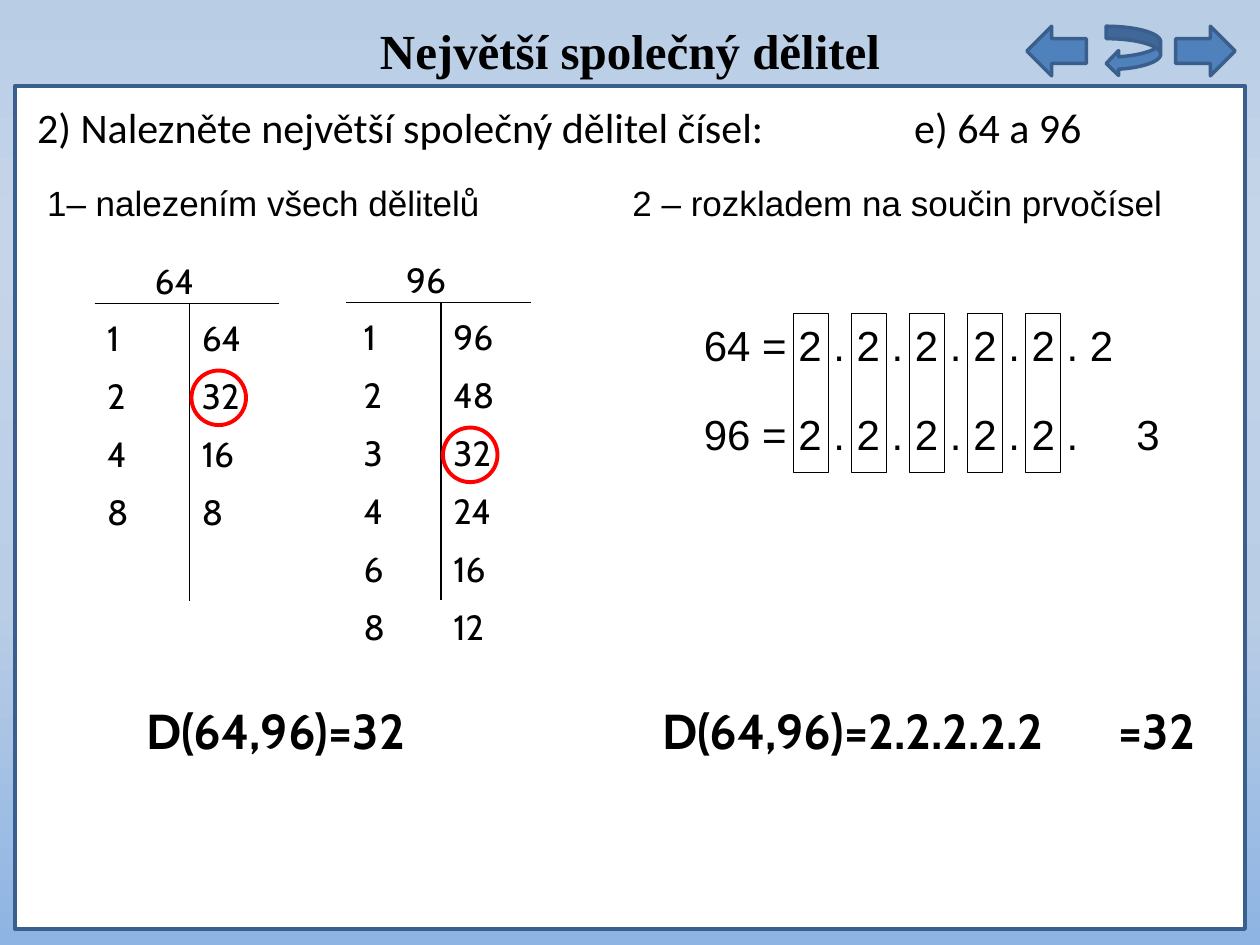
from lxml.etree import SubElement
from pptx import Presentation
from pptx.dml.color import RGBColor
from pptx.enum.shapes import MSO_CONNECTOR, MSO_SHAPE as Shape
from pptx.enum.text import MSO_ANCHOR as Anchor, MSO_AUTO_SIZE as AutoSize, PP_ALIGN as Align
from pptx.oxml.ns import qn
from pptx.util import Cm, Pt

BLACK = RGBColor(0x00, 0x00, 0x00)
WHITE = RGBColor(0xFF, 0xFF, 0xFF)
RED = RGBColor(0xFF, 0x00, 0x00)
BLUE = RGBColor(0x4F, 0x81, 0xBD)
DARK_BLUE = RGBColor(0x3A, 0x5F, 0x8C)
SKY = ((0, "B9CDE5"), (25, "C5D5E9"), (64, "B9CDE5"), (100, "8EB4E3"))


# All positions and lengths passed to the functions are centimetres.
def add_text(slide, text, left, top, width, height, font, size, bold=False,
             align=Align.LEFT, space_after=None, tab=None, middle=False):
    box = slide.shapes.add_textbox(Cm(left), Cm(top), Cm(width), Cm(height))
    frame = box.text_frame
    frame.word_wrap = True
    if middle:
        frame.vertical_anchor = Anchor.MIDDLE
    else:
        frame.auto_size = AutoSize.SHAPE_TO_FIT_TEXT
    paragraph = frame.paragraphs[0]
    paragraph.text = text
    paragraph.alignment = align
    if space_after:
        paragraph.space_after = Pt(space_after)
    if tab:
        properties = paragraph._p.get_or_add_pPr()
        tab_list = SubElement(properties, qn("a:tabLst"))
        SubElement(tab_list, qn("a:tab"), pos=str(Cm(tab)), algn="l")
    paragraph.font.name = font
    paragraph.font.size = Pt(size)
    paragraph.font.bold = bold
    paragraph.font.color.rgb = BLACK


def add_outline(slide, kind, left, top, width, height, line, weight, fill=None):
    shape = slide.shapes.add_shape(kind, Cm(left), Cm(top), Cm(width), Cm(height))
    shape.shadow.inherit = False
    if fill is None:
        shape.fill.background()
    else:
        shape.fill.solid()
        shape.fill.fore_color.rgb = fill
    shape.line.color.rgb = line
    shape.line.width = Pt(weight)


def add_line(slide, x1, y1, x2, y2):
    line = slide.shapes.add_connector(MSO_CONNECTOR.STRAIGHT, Cm(x1), Cm(y1), Cm(x2), Cm(y2))
    line.line.color.rgb = BLACK
    line.line.width = Pt(0.75)
    SubElement(line._element.spPr, qn("a:effectLst"))


def paint_background(slide):
    fill = slide.background.fill
    fill.gradient()
    fill.gradient_angle = 270
    stops = slide.element.xpath(".//a:gsLst")[0]
    for stop in list(stops):
        stops.remove(stop)
    for percent, color in SKY:
        stop = SubElement(stops, qn("a:gs"), pos=str(percent * 1000))
        SubElement(stop, qn("a:srgbClr"), val=color)


def add_header(slide, left, top, width):
    add_text(slide, "Největší společný dělitel", left, top, width, 1.45,
             "Times New Roman", 28, bold=True, align=Align.CENTER)
    # Navigation arrows
    arrows = ((Shape.LEFT_ARROW, 20.4, 1.2), (Shape.CURVED_LEFT_ARROW, 22, 1.1),
              (Shape.RIGHT_ARROW, 23.4, 1.2))
    for kind, offset, arrow_width in arrows:
        add_outline(slide, kind, left + offset, top + 0.25, arrow_width, 1,
                    DARK_BLUE, 2, BLUE)


def add_assignment(slide, left, top):
    add_text(slide, "2) Nalezněte největší společný dělitel čísel:\te) 64 a 96",
             left, top, 25.2, 1.3, "Calibri", 24, tab=17.68)
    methods = (("1– nalezením všech dělitelů", 0.2, 9.8),
               ("2 – rozkladem na součin prvočísel", 12, 12.2))
    for method, offset, width in methods:
        add_text(slide, method, left + offset, top + 1.6, width, 1.12, "Arial", 20,
                 space_after=24)


def add_divisor_table(slide, number, pairs, common, left, top, inset=0):
    """Divisor pairs of a number; left and top give the end of the crossbar."""
    column, row_pitch, cell = 1.91, 1.17, (1.8, 1.12)
    add_line(slide, left, top, left + 3.72, top)
    add_line(slide, left + column, top, left + column, top + 6)
    add_text(slide, str(number), left + 0.96, top - 1.02, *cell, "Cabin", 20)
    for row, pair in enumerate(pairs):
        y = top + 0.13 + row * row_pitch
        for x, divisor in zip((left + inset, left + column), pair):
            add_text(slide, str(divisor), x, y, *cell, "Cabin", 20)
            if divisor == common:
                add_outline(slide, Shape.OVAL, x + 0.04, y + 0.05, 1.1, 1.1, RED, 2.25)


def add_factorizations(slide, left, top):
    products = ("64 = 2 . 2 . 2 . 2 . 2 . 2", "96 = 2 . 2 . 2 . 2 . 2 .\t3")
    for row, product in enumerate(products):
        add_text(slide, product, left, top + row * 1.8, 9.75, 1.3, "Arial", 24,
                 space_after=24, tab=8.72)
    # Frames around the shared prime factors
    for factor in range(5):
        add_outline(slide, Shape.RECTANGLE, left + 2.06 + factor * 1.17, top, 0.7, 3.2,
                    BLACK, 0.75)


def add_results(slide, left, top):
    results = (("D(64,96)=32", 0, 7.4), ("D(64,96)=2.2.2.2.2", 10.4, 10),
               ("=32", 19.6, 3))
    for result, offset, width in results:
        add_text(slide, result, left + offset, top, width, 2, "Cabin", 28,
                 bold=True, middle=True)


def main():
    presentation = Presentation()
    presentation.slide_width, presentation.slide_height = Cm(25.4), Cm(19.05)
    slide = presentation.slides.add_slide(presentation.slide_layouts[6])
    paint_background(slide)
    # White work area
    add_outline(slide, Shape.RECTANGLE, 0.3, 1.73, 24.8, 17, DARK_BLUE, 2, WHITE)
    add_header(slide, 0.3, 0.28, 24.8)
    add_assignment(slide, 0.5, 1.93)
    add_divisor_table(slide, 64, ((1, 64), (2, 32), (4, 16), (8, 8)), 32, 1.91, 6.12)
    add_divisor_table(slide, 96, ((1, 96), (2, 48), (3, 32), (4, 24), (6, 16), (8, 12)),
                      32, 6.98, 6.1, inset=0.1)
    add_factorizations(slide, 13.94, 6.32)
    add_results(slide, 2.7, 13.72)
    presentation.save("out.pptx")


if __name__ == "__main__":
    main()
